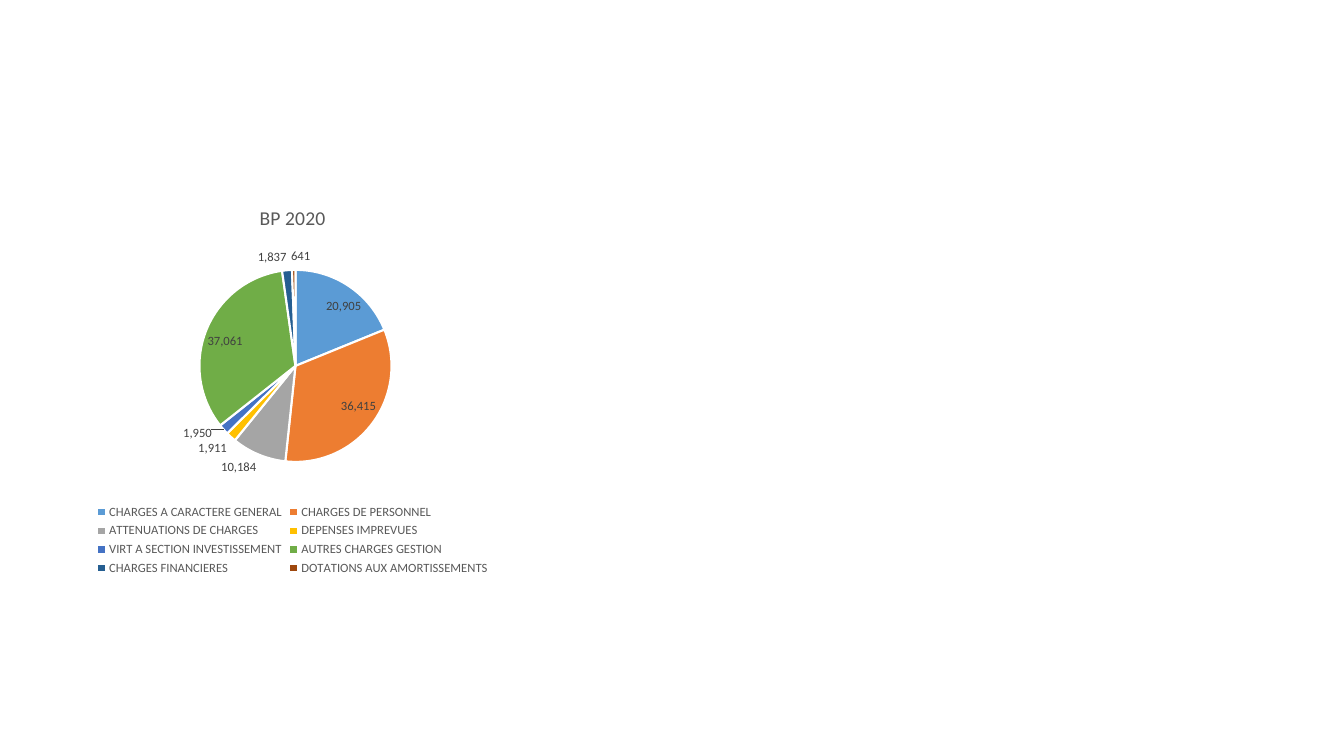
from lxml import etree
from pptx import Presentation
from pptx.chart.data import CategoryChartData
from pptx.dml.color import RGBColor
from pptx.enum.chart import XL_CHART_TYPE, XL_LABEL_POSITION, XL_LEGEND_POSITION
from pptx.oxml.ns import qn
from pptx.util import Pt

TITLE = "BP 2020"
EXPENSES = [
    ("CHARGES A CARACTERE GENERAL", 20905, "5B9BD5"),
    ("CHARGES DE PERSONNEL", 36415, "ED7D31"),
    ("ATTENUATIONS DE CHARGES", 10184, "A5A5A5"),
    ("DEPENSES IMPREVUES", 1911, "FFC000"),
    ("VIRT A SECTION INVESTISSEMENT", 1950, "4472C4"),
    ("AUTRES CHARGES GESTION", 37061, "70AD47"),
    ("CHARGES FINANCIERES", 1837, "255E91"),
    ("DOTATIONS AUX AMORTISSEMENTS", 641, "9E480E"),
]


def color(value):
    return RGBColor.from_string(value)


class BudgetSlide:
    font_name = "Calibri"
    text_color = "595959"
    label_color = "404040"
    border_color = "FFFFFF"

    def __init__(self, presentation):
        self.slide = presentation.slides.add_slide(presentation.slide_layouts[6])

    def style_font(self, font, size, hex_color):
        font.name = self.font_name
        font.size = Pt(size)
        font.bold = False
        font.color.rgb = color(hex_color)

    def add_pie(self, title, expenses, left, top, width, height, plot_box):
        """Draw a pie; plot_box gives x, y, w, h as fractions of the chart."""
        budget = CategoryChartData(number_format="#,##0")
        budget.categories = [name for name, _, _ in expenses]
        budget.add_series(title, [amount for _, amount, _ in expenses])
        chart = self.slide.shapes.add_chart(
            XL_CHART_TYPE.PIE, Pt(left), Pt(top), Pt(width), Pt(height), budget
        ).chart
        self.style_font(chart.font, 10, "000000")
        self.add_title(chart, title)
        self.add_legend(chart)
        pie = chart.plots[0]
        pie.vary_by_categories = True
        self.color_slices(pie.series[0], [fill for _, _, fill in expenses])
        self.add_labels(pie)
        self.place_plot(chart, plot_box)

    def add_title(self, chart, title):
        chart.has_title = True
        paragraph = chart.chart_title.text_frame.paragraphs[0]
        paragraph.text = title
        self.style_font(paragraph.runs[0].font, 14, self.text_color)
        chart.chart_title.include_in_layout = False

    def add_legend(self, chart):
        chart.has_legend = True
        chart.legend.position = XL_LEGEND_POSITION.BOTTOM
        chart.legend.include_in_layout = False
        self.style_font(chart.legend.font, 9, self.text_color)

    def color_slices(self, series, fills):
        for index, fill in enumerate(fills):
            slice_format = series.points[index].format
            slice_format.fill.solid()
            slice_format.fill.fore_color.rgb = color(fill)
            slice_format.line.color.rgb = color(self.border_color)
            slice_format.line.width = Pt(1.5)

    def add_labels(self, pie):
        pie.has_data_labels = True
        labels = pie.data_labels
        labels.show_value = True
        labels.show_percentage = False
        labels.number_format = "#,##0"
        labels.number_format_is_linked = False
        labels.position = XL_LABEL_POSITION.BEST_FIT
        self.style_font(labels.font, 9, self.label_color)

    def place_plot(self, chart, plot_box):
        plot_area = chart.plots[0]._element.getparent()
        for old_layout in plot_area.findall(qn("c:layout")):
            plot_area.remove(old_layout)
        layout = etree.Element(qn("c:layout"))
        manual = etree.SubElement(layout, qn("c:manualLayout"))
        settings = [("layoutTarget", "inner"), ("xMode", "edge"), ("yMode", "edge")]
        for tag, value in settings + list(zip("xywh", plot_box)):
            etree.SubElement(manual, qn(f"c:{tag}")).set("val", str(value))
        plot_area.insert(0, layout)


def main():
    presentation = Presentation()
    presentation.slide_width = Pt(960)
    presentation.slide_height = Pt(540)
    budget_slide = BudgetSlide(presentation)
    budget_slide.add_pie(TITLE, EXPENSES, 0, 134, 418, 280, (0.34, 0.21, 0.33, 0.49))
    presentation.save("out.pptx")


if __name__ == "__main__":
    main()
